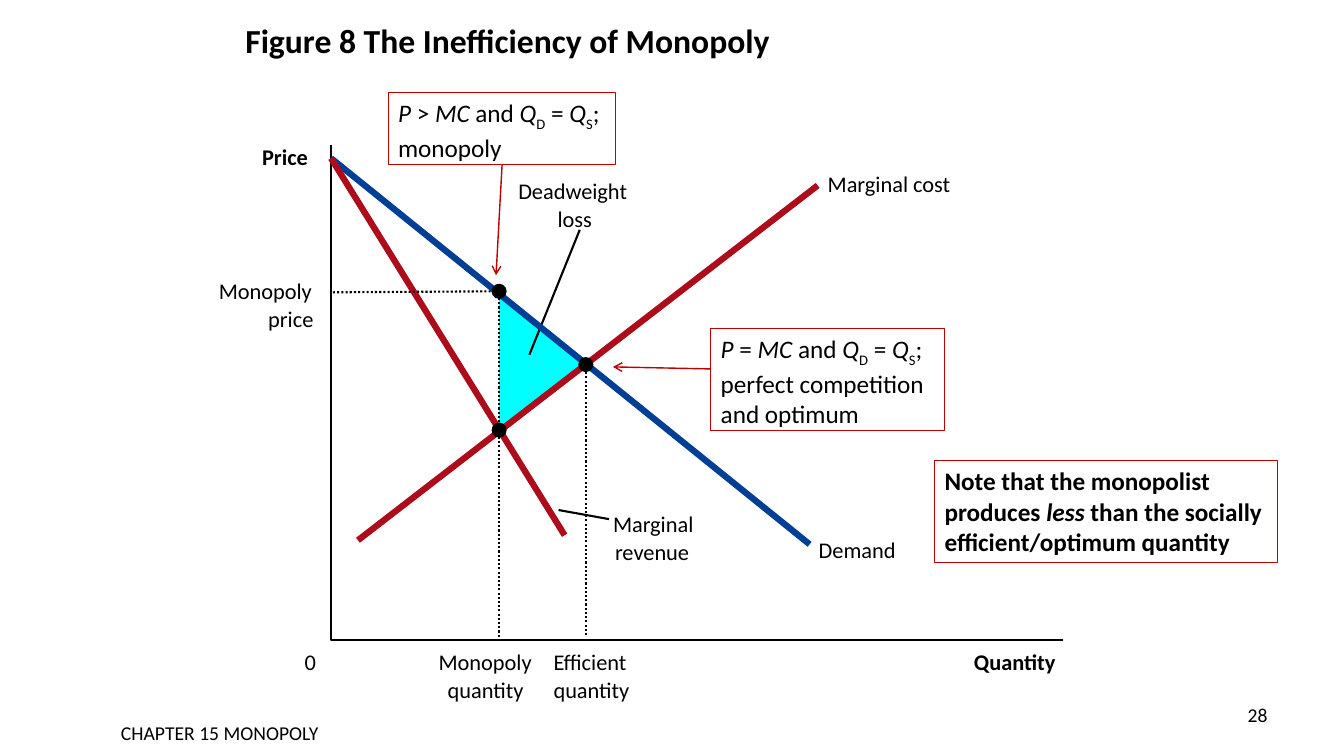
from pptx import Presentation
from pptx.dml.color import RGBColor
from pptx.enum.dml import MSO_LINE
from pptx.enum.shapes import MSO_CONNECTOR, MSO_SHAPE
from pptx.enum.text import MSO_ANCHOR, PP_ALIGN
from pptx.oxml.ns import qn
from pptx.util import Inches, Pt
from lxml import etree

STRAIGHT = MSO_CONNECTOR.STRAIGHT
RECT, OVAL = MSO_SHAPE.RECTANGLE, MSO_SHAPE.OVAL
DOTTED = MSO_LINE.ROUND_DOT
TOP, MIDDLE = MSO_ANCHOR.TOP, MSO_ANCHOR.MIDDLE
LEFT, CENTER, RIGHT = PP_ALIGN.LEFT, PP_ALIGN.CENTER, PP_ALIGN.RIGHT
BLACK, BLUE, RED, FRAME, CYAN = "000000", "003F95", "AD0D1B", "C00000", "00FFFF"
BOLD, ITALIC = {"bold": True}, {"italic": True}
SUBSCRIPT = {"baseline": "-25000"}

prs = Presentation()
prs.slide_width, prs.slide_height = Inches(13.33), Inches(7.5)
slide = prs.slides.add_slide(prs.slide_layouts[5])
shapes = slide.shapes
CELL = prs.slide_height / 45  # square grid: 45 rows, 80 columns


def grid(*cells):
    return [round(cell * CELL) for cell in cells]


def write(frame, runs, size, align=LEFT, anchor=TOP, wrap=True):
    """Fill a text frame with one paragraph of (text, format) runs."""
    frame.word_wrap, frame.vertical_anchor = wrap, anchor
    paragraph = frame.paragraphs[0]
    paragraph.alignment = align
    for text, style in runs:
        run = paragraph.add_run()
        run.text = text
        run.font.color.rgb = RGBColor.from_string(BLACK)
        values = {"name": "Calibri", "size": Pt(size), "bold": False, "italic": False, **style}
        baseline = values.pop("baseline", None)
        for key, value in values.items():
            setattr(run.font, key, value)
        if baseline:
            run._r.get_or_add_rPr().set("baseline", baseline)
    return paragraph


# Title
title = shapes.title
title.left, title.top, title.width, title.height = grid(14, 0.36, 54, 4.5)
heading = write(title.text_frame, [("Figure 8 The Inefficiency of Monopoly", BOLD)], 24, anchor=MIDDLE)
heading.line_spacing = 0.8

# Key points of the diagram
origin_x, origin_y = 19.7, 38.1
choke_point = (origin_x, 9.42)
monopoly_point = (29.7, 17.34)
revenue_meets_cost = (29.7, 25.6)
efficient_point = (34.86, 21.7)

# Deadweight loss triangle and axes
outlines = [
    ([monopoly_point, revenue_meets_cost, efficient_point], True),
    ([(origin_x, 8.66), (origin_x, origin_y), (63.26, origin_y)], False),
]
for points, closed in outlines:
    builder = shapes.build_freeform(*grid(*points[0]))
    builder.add_line_segments([grid(*point) for point in points[1:]], close=closed)
    outline = builder.convert_to_shape()
    outline.shadow.inherit = False
    if closed:
        outline.fill.solid()
        outline.fill.fore_color.rgb = RGBColor.from_string(CYAN)
        outline.line.fill.background()
    else:
        outline.fill.background()
        outline.line.color.rgb = RGBColor.from_string(BLACK)
        outline.line.width = Pt(1.5)

# Pointers, curves, guides and arrows: start, end, colour, width, dash, arrowhead
segments = [
    ((31.5, 21.12), (34.5, 13.68), BLACK, 1.5, None, False),
    (choke_point, (48.18, 32.4), BLUE, 4.5, None, False),
    (choke_point, (33.6, 31.86), RED, 4.5, None, False),
    ((33.24, 30.36), (36.24, 30.9), BLACK, 1.5, None, False),
    ((48.66, 11.04), (21.3, 32.16), RED, 4.5, None, False),
    ((efficient_point[0], 37.8), efficient_point, BLACK, 1.5, DOTTED, False),
    ((monopoly_point[0], 37.9), monopoly_point, BLACK, 1.5, DOTTED, False),
    (monopoly_point, (origin_x, 17.4), BLACK, 1.5, DOTTED, False),
    ((29.88, 9.78), (29.52, 16.38), FRAME, 1, None, True),
    ((42.24, 21.96), (36.48, 21.84), FRAME, 1, None, True),
]
for start, end, color, width, dash, arrow in segments:
    segment = shapes.add_connector(STRAIGHT, *grid(*start, *end))
    segment.line.color.rgb = RGBColor.from_string(color)
    segment.line.width = Pt(width)
    if dash:
        segment.line.dash_style = dash
    if arrow:
        etree.SubElement(segment.line._get_or_add_ln(), qn("a:tailEnd"), type="arrow")
    etree.SubElement(segment._element.spPr, qn("a:effectLst"))

# Intersection dots
DOT = 0.9
for x, y in (efficient_point, revenue_meets_cost, monopoly_point):
    dot = shapes.add_shape(OVAL, *grid(x - DOT / 2, y - DOT / 2, DOT, DOT))
    dot.shadow.inherit = False
    dot.fill.solid()
    dot.fill.fore_color.rgb = RGBColor.from_string(BLACK)
    dot.line.fill.background()

# Labels: top row, style, then text, left and width of each line
LINE_STEP, LINE_HEIGHT = 1.68, 1.62
AXIS_ROW = 38.58
labels = [
    (AXIS_ROW, BOLD, [("Quantity", 57.96, 4.92)]),
    (AXIS_ROW, {}, [("0", 18.12, 0.66)]),
    (8.52, BOLD, [("Price", 15.6, 2.76)]),
    (10.56, {}, [("Deadweight", 30.84, 6.54), ("loss", 33.18, 2.1)]),
    (31.92, {}, [("Demand", 48.72, 4.62)]),
    (30.36, {}, [("Marginal", 36.48, 4.86), ("revenue", 36.6, 4.5)]),
    (10.14, {}, [("Marginal cost", 49.26, 7.38)]),
    (AXIS_ROW, {}, [("Efficient", 32.94, 4.44), ("quantity", 32.94, 4.68)]),
    (16.5, {}, [("Monopoly", 13.02, 5.76), ("price", 15.96, 2.7)]),
    (AXIS_ROW, {}, [("Monopoly", 26.1, 5.76), ("quantity", 26.64, 4.68)]),
]
for row, style, lines in labels:
    for index, (text, left, width) in enumerate(lines):
        label = shapes.add_textbox(*grid(left, row + index * LINE_STEP, width, LINE_HEIGHT))
        for side in ("left", "top", "right", "bottom"):
            setattr(label.text_frame, "margin_" + side, 0)
        write(label.text_frame, [(text, style)], 16, wrap=False)

# Framed callouts
market_clears = [("MC", ITALIC), (" and ", {}), ("Q", ITALIC), ("D", SUBSCRIPT),
                 (" = ", {}), ("Q", ITALIC), ("S", SUBSCRIPT)]
callouts = [
    ((23.1, 5.52, 13.56, 4.26),
     [("P", ITALIC), (" > ", {}), *market_clears, ("; monopoly", {})]),
    ((42.3, 19.56, 13.92, 6.06),
     [("P", ITALIC), (" = ", {}), *market_clears, ("; perfect competition and optimum", {})]),
    ((55.62, 27.42, 20.4, 6.06),
     [("Note that the monopolist produces ", BOLD), ("less ", {**BOLD, **ITALIC}),
      ("than the socially efficient/optimum quantity", BOLD)]),
]
for place, runs in callouts:
    callout = shapes.add_shape(RECT, *grid(*place))
    callout.shadow.inherit = False
    callout.fill.background()
    callout.line.color.rgb = RGBColor.from_string(FRAME)
    callout.line.width = Pt(0.75)
    write(callout.text_frame, runs, 18)

# Page number and chapter footer
footers = [
    ("28", (71.16, 41.52, 4.86, 3.12), RIGHT),
    ("CHAPTER 15 MONOPOLY", (1.92, 42.6, 22.32, 1.98), CENTER),
]
for text, place, align in footers:
    footer = shapes.add_textbox(*grid(*place))
    write(footer.text_frame, [(text, {})], 14, align)

prs.save("out.pptx")
